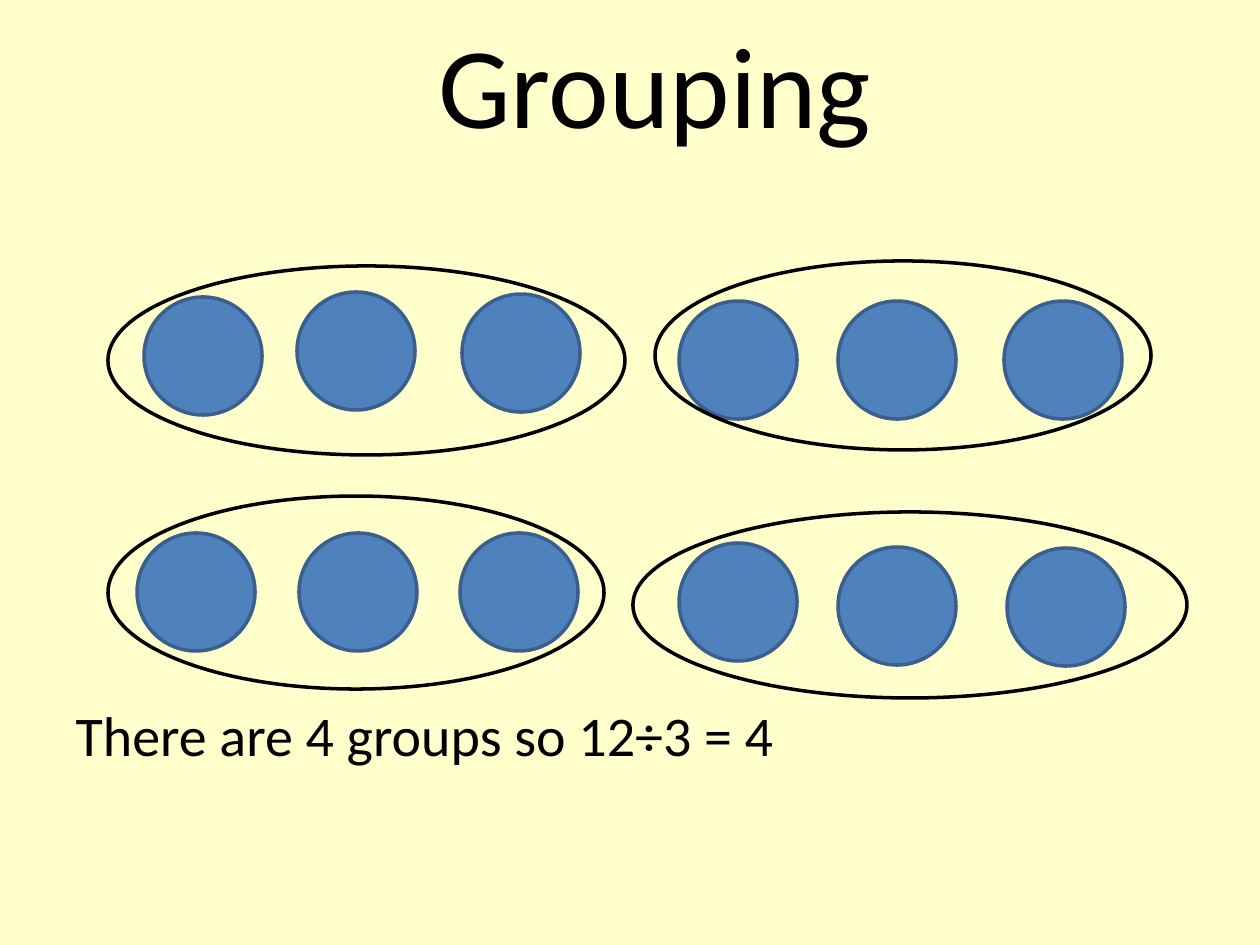
from pptx import Presentation
from pptx.dml.color import RGBColor
from pptx.enum.shapes import MSO_SHAPE
from pptx.enum.text import MSO_ANCHOR, MSO_AUTO_SIZE, PP_ALIGN
from pptx.util import Pt

OVAL = MSO_SHAPE.OVAL
MIDDLE, TOP = MSO_ANCHOR.MIDDLE, MSO_ANCHOR.TOP
CENTER, LEFT = PP_ALIGN.CENTER, PP_ALIGN.LEFT
NO_AUTOFIT = MSO_AUTO_SIZE.NONE

EMU_PER_PX = 914400 / 126
SLIDE_SIZE = (1260, 945)
COUNTER_SIZE = 118
LINE_WIDTH = 2
COLORS = {
    "background": "FFFFCC",
    "text": "000000",
    "counter": "4F81BD",
    "counter_line": "3A5F8C",
    "ring": "000000",
}
TITLE_BOX = (88, 37, 1134, 158)
BODY_BOX = (63, 221, 1134, 624)
GROUPS = [
    ((108, 266, 517, 189), [(36, 31), (189, 26), (354, 28)]),
    ((655, 261, 496, 189), [(24, 40), (183, 40), (349, 40)]),
    ((108, 496, 496, 193), [(29, 37), (191, 37), (352, 37)]),
    ((633, 512, 554, 186), [(46, 31), (205, 35), (374, 36)]),
]


def px(length):
    return round(length * EMU_PER_PX)


def color(name):
    return RGBColor.from_string(COLORS[name])


def set_attributes(target, values):
    for name, value in values.items():
        setattr(target, name, value)


def place(shape, box):
    names = ("left", "top", "width", "height")
    set_attributes(shape, dict(zip(names, map(px, box))))


def fill_placeholder(shape, box, text, size, alignment, frame_format):
    place(shape, box)
    frame = shape.text_frame
    frame.text = text
    set_attributes(frame, {"auto_size": NO_AUTOFIT, "word_wrap": True, **frame_format})
    paragraph = frame.paragraphs[0]
    set_attributes(paragraph, {"alignment": alignment, "space_before": Pt(0)})
    font = paragraph.runs[0].font
    set_attributes(font, {"name": "Calibri", "size": Pt(size)})
    font.color.rgb = color("text")
    return paragraph


def add_title(slide, box):
    frame_format = {"vertical_anchor": MIDDLE, "margin_bottom": px(74)}
    fill_placeholder(slide.shapes.title, box, "Grouping", 65.7, CENTER, frame_format)


def add_conclusion(slide, box):
    frame_format = {"vertical_anchor": TOP, "margin_top": px(480)}
    paragraph = fill_placeholder(slide.placeholders[1], box,
                                 "There are 4 groups so 12÷3 = 4", 32, LEFT, frame_format)
    properties = paragraph._p.get_or_add_pPr()
    properties.set("marL", "0")
    properties.set("indent", "0")
    properties.insert_element_before(
        properties.makeelement(
            "{http://schemas.openxmlformats.org/drawingml/2006/main}buNone", {}),
        "a:tabLst", "a:defRPr", "a:extLst")


def add_oval(slide, box, line, fill=None):
    shape = slide.shapes.add_shape(OVAL, *map(px, box))
    shape.shadow.inherit = False
    if fill:
        shape.fill.solid()
        shape.fill.fore_color.rgb = color(fill)
    else:
        shape.fill.background()
    shape.line.color.rgb = color(line)
    shape.line.width = Pt(LINE_WIDTH)


def add_group(slide, box, offsets):
    left, top = box[:2]
    for across, down in offsets:
        counter_box = (left + across, top + down, COUNTER_SIZE, COUNTER_SIZE)
        add_oval(slide, counter_box, "counter_line", "counter")
    add_oval(slide, box, "ring")


def main():
    presentation = Presentation()
    presentation.slide_width, presentation.slide_height = map(px, SLIDE_SIZE)
    slide = presentation.slides.add_slide(presentation.slide_layouts[1])
    slide.background.fill.solid()
    slide.background.fill.fore_color.rgb = color("background")
    add_title(slide, TITLE_BOX)
    add_conclusion(slide, BODY_BOX)
    for box, offsets in GROUPS:
        add_group(slide, box, offsets)
    presentation.save("out.pptx")


if __name__ == "__main__":
    main()
